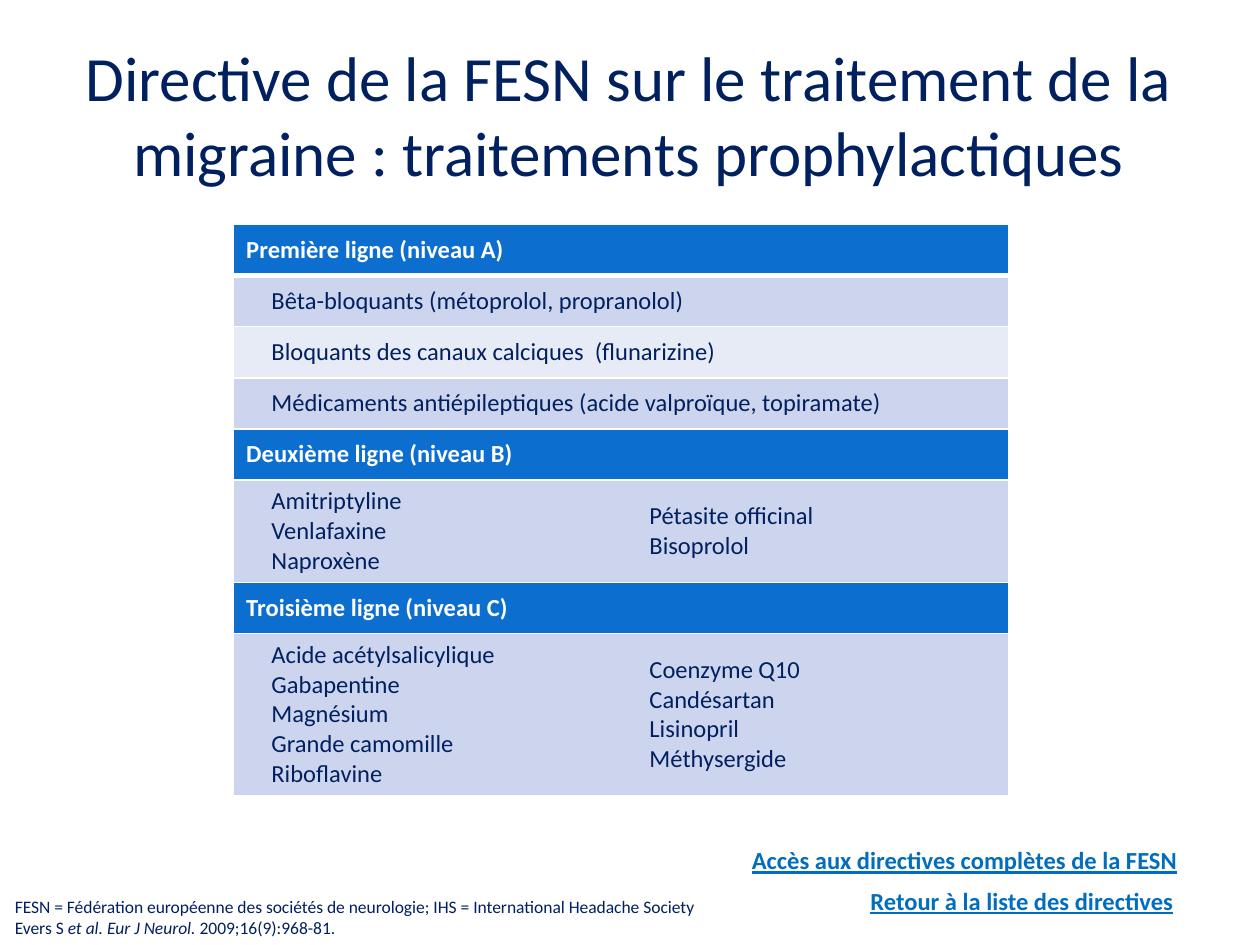
from lxml import etree
from pptx import Presentation
from pptx.dml.color import RGBColor
from pptx.enum import text
from pptx.oxml.ns import qn
from pptx.util import Pt

NAVY = RGBColor(0x00, 0x20, 0x60)
LINK_BLUE = RGBColor(0x00, 0x6D, 0xBF)
HEADER_BLUE = RGBColor(0x0C, 0x6F, 0xCF)
BAND_DARK = RGBColor(0xCC, 0xD5, 0xED)
BAND_LIGHT = RGBColor(0xE7, 0xEB, 0xF6)
WHITE = RGBColor(0xFF, 0xFF, 0xFF)
FONT = "Calibri"
ROW_HEIGHT = 29.2
LINE_HEIGHT = 17.1

# Each row: fill, then one list of lines per column (one column spans the table).
TREATMENTS = [
    (HEADER_BLUE, [["Première ligne (niveau A)"]]),
    (BAND_DARK, [["Bêta-bloquants (métoprolol, propranolol)"]]),
    (BAND_LIGHT, [["Bloquants des canaux calciques  (flunarizine)"]]),
    (BAND_DARK, [["Médicaments antiépileptiques (acide valproïque, topiramate)"]]),
    (HEADER_BLUE, [["Deuxième ligne (niveau B)"]]),
    (BAND_DARK, [["Amitriptyline", "Venlafaxine", "Naproxène"],
                 ["Pétasite officinal", "Bisoprolol"]]),
    (HEADER_BLUE, [["Troisième ligne (niveau C)"]]),
    (BAND_DARK, [["Acide acétylsalicylique", "Gabapentine", "Magnésium",
                  "Grande camomille", "Riboflavine"],
                 ["Coenzyme Q10", "Candésartan", "Lisinopril", "Méthysergide"]]),
]


def set_font(paragraph, size, color, bold=False, underline=None):
    font = paragraph.font
    font.name, font.size, font.bold = FONT, Pt(size), bold
    font.underline = underline
    font.color.rgb = color


def add_title(slide, wording):
    title = slide.shapes.title
    title.left, title.top, title.width, title.height = Pt(35.3), Pt(20), Pt(648), Pt(90)
    frame = title.text_frame
    frame.text = wording
    frame.vertical_anchor = text.MSO_ANCHOR.MIDDLE
    frame.paragraphs[0].alignment = text.PP_ALIGN.CENTER
    set_font(frame.paragraphs[0], 36, NAVY)


def add_text_frame(slide, left, top, width, height, wrap):
    frame = slide.shapes.add_textbox(Pt(left), Pt(top), Pt(width), Pt(height)).text_frame
    frame.word_wrap = wrap
    return frame


def add_link_label(slide, wording, left, top, width):
    frame = add_text_frame(slide, left, top, width, 24.5, False)
    frame.text = wording
    set_font(frame.paragraphs[0], 14, LINK_BLUE, bold=True, underline=True)


def add_footnote(slide):
    frame = add_text_frame(slide, 1.4, 508.5, 476, 31.5, True)
    frame.text = ("FESN = Fédération européenne des sociétés de neurologie; "
                  "IHS = International Headache Society")
    citation = frame.add_paragraph()
    for wording, italic in (("Evers S ", None), ("et al. Eur J Neurol.", True),
                            (" 2009;16(9):968-81.", None)):
        run = citation.add_run()
        run.text = wording
        run.font.italic = italic
    for paragraph in frame.paragraphs:
        set_font(paragraph, 10, NAVY)


def set_borders(cell, widths):
    """Draw white borders; widths maps L, R, T, B to points, 0 for no line."""
    properties = cell._tc.get_or_add_tcPr()
    for side, width in widths.items():
        line = etree.SubElement(properties, qn(f"a:ln{side}"), w=str(Pt(width)))
        if width:
            solid = etree.SubElement(line, qn("a:solidFill"))
            etree.SubElement(solid, qn("a:srgbClr"), val=str(WHITE))
        else:
            etree.SubElement(line, qn("a:noFill"))


def fill_cell(cell, lines, fill):
    is_header = fill == HEADER_BLUE
    cell.fill.solid()
    cell.fill.fore_color.rgb = fill
    cell.vertical_anchor = text.MSO_ANCHOR.MIDDLE
    cell.text = "\n".join(lines)
    for paragraph in cell.text_frame.paragraphs:
        if not is_header:
            paragraph._p.get_or_add_pPr().set("marL", str(Pt(14.4)))
        set_font(paragraph, 14, WHITE if is_header else NAVY, bold=is_header)


def add_treatment_table(slide):
    heights = [max(ROW_HEIGHT, 7.2 + LINE_HEIGHT * max(map(len, columns)))
               for _, columns in TREATMENTS]
    table = slide.shapes.add_table(len(TREATMENTS), 2, Pt(133.5), Pt(128.3),
                                   Pt(442.8), Pt(sum(heights))).table
    table.columns[0].width, table.columns[1].width = Pt(216), Pt(226.8)
    for index, (fill, columns) in enumerate(TREATMENTS):
        table.rows[index].height = Pt(heights[index])
        left, right = table.cell(index, 0), table.cell(index, 1)
        top_width = 3 if index == 1 else 1
        bottom_width = 3 if index == 0 else 1
        inner = 0 if len(columns) == 2 else 1
        set_borders(left, {"L": 1, "R": inner, "T": top_width, "B": bottom_width})
        set_borders(right, {"L": inner, "R": 1, "T": top_width, "B": bottom_width})
        if len(columns) == 1:
            left.merge(right)
        for cell, lines in zip((left, right), columns):
            fill_cell(cell, lines, fill)


def main():
    presentation = Presentation()
    presentation.slide_width, presentation.slide_height = Pt(720), Pt(540)
    slide = presentation.slides.add_slide(presentation.slide_layouts[5])
    add_footnote(slide)
    add_title(slide, "Directive de la FESN sur le traitement de la migraine : "
                     "traitements prophylactiques")
    add_link_label(slide, "Retour à la liste des directives", 490.3, 502.6, 188.6)
    add_link_label(slide, "Accès aux directives complètes de la FESN", 422.6, 479.5, 259.2)
    add_treatment_table(slide)
    presentation.save("out.pptx")


if __name__ == "__main__":
    main()
